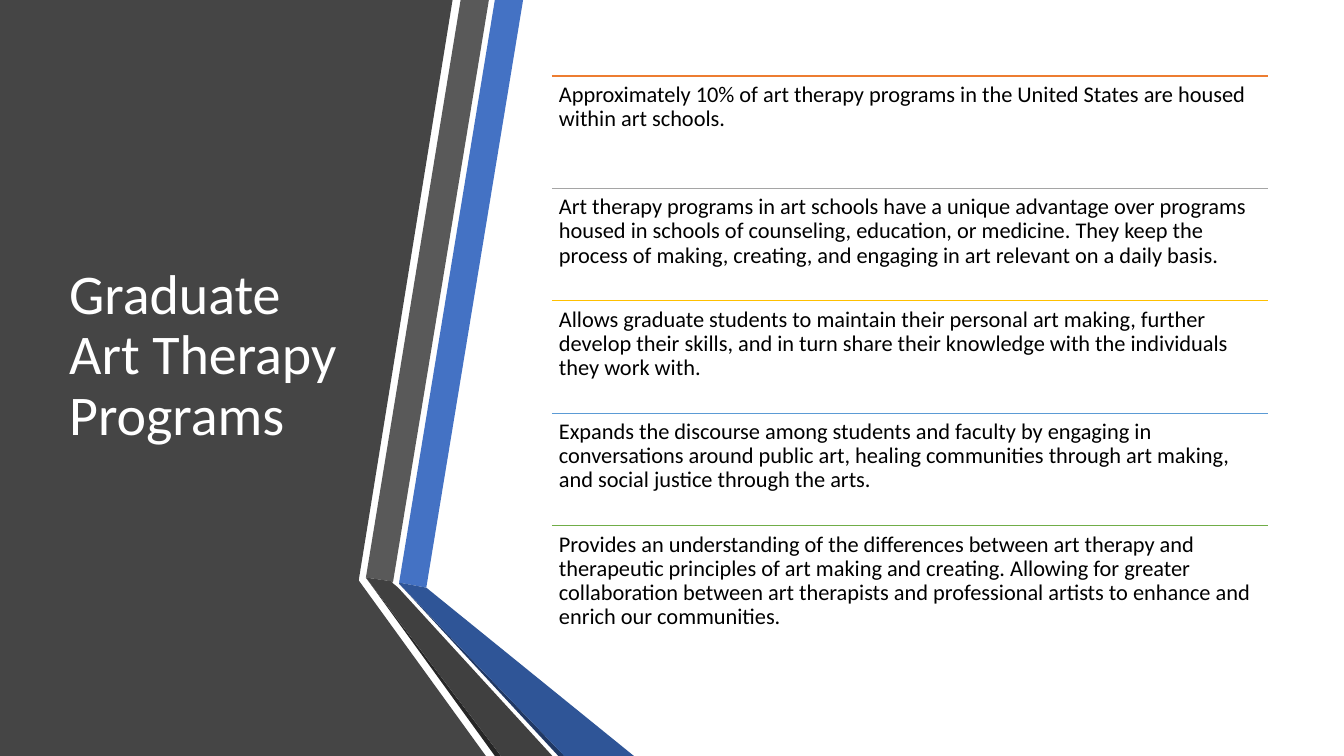
from dataclasses import dataclass

from lxml import etree
from pptx import Presentation
from pptx.dml.color import RGBColor
from pptx.enum.shapes import MSO_CONNECTOR
from pptx.enum.text import MSO_ANCHOR, MSO_AUTO_SIZE, PP_ALIGN
from pptx.oxml.ns import qn
from pptx.util import Inches, Pt

STRAIGHT = MSO_CONNECTOR.STRAIGHT
TOP, MIDDLE = MSO_ANCHOR.TOP, MSO_ANCHOR.MIDDLE
LEFT = PP_ALIGN.LEFT
NO_FIT = MSO_AUTO_SIZE.NONE

TITLE = "Graduate Art Therapy Programs"

# Rule colour and statement for each row
POINTS = [
    ("ED7D31", "Approximately 10% of art therapy programs in the United States "
     "are housed within art schools."),
    ("A5A5A5", "Art therapy programs in art schools have a unique advantage over "
     "programs housed in schools of counseling, education, or medicine. They keep "
     "the process of making, creating, and engaging in art relevant on a daily basis."),
    ("FFC000", "Allows graduate students to maintain their personal art making, "
     "further develop their skills, and in turn share their knowledge with the "
     "individuals they work with."),
    ("5B9BD5", "Expands the discourse among students and faculty by engaging in "
     "conversations around public art, healing communities through art making, "
     "and social justice through the arts."),
    ("70AD47", "Provides an understanding of the differences between art therapy and "
     "therapeutic principles of art making and creating. Allowing for greater "
     "collaboration between art therapists and professional artists to enhance and "
     "enrich our communities."),
]

HEIGHT = 7.5
WIDTH = HEIGHT * 16 / 9

# Fill and corners of each band, in inches, from back to front
BANDS = [
    # Title panel
    ("454545", [(0, 0), (4.49, 0), (3.56, 5.75), (3.56, 5.76), (4.82, HEIGHT),
                (0, HEIGHT)]),
    # Upper bands
    ("4472C4", [(3.96, 5.78), (4.23, 5.83), (5.19, 0), (4.91, 0)]),
    ("595959", [(4.85, 0), (4.57, 0), (3.63, 5.73), (3.9, 5.77)]),
    # Shaded edges
    ("262626", [(3.63, 5.73), (4.91, HEIGHT), (4.97, HEIGHT)]),
    ("203864", [(3.96, 5.79), (5.54, HEIGHT), (5.6, HEIGHT)]),
    # Lower bands
    ("2F5597", [(3.96, 5.79), (5.6, HEIGHT), (6.29, HEIGHT), (4.23, 5.83),
                (3.96, 5.78)]),
    ("404040", [(5.48, HEIGHT), (3.95, 5.83), (3.89, 5.78), (3.9, 5.77),
                (3.63, 5.73), (4.97, HEIGHT)]),
]
UNITS_PER_INCH = 100

# Left, top, width and height in points
TITLE_AREA = (42.2, 54, 218.8, 401.8)
LIST_LEFT, LIST_TOP, LIST_WIDTH, LIST_HEIGHT = 394.2, 54.2, 511.4, 401.6
ROW_HEIGHT = LIST_HEIGHT / len(POINTS)


@dataclass(frozen=True)
class Theme:
    font: str = "Calibri"
    title_size: int = 40
    body_size: int = 16
    title_color: str = "FFFFFF"
    body_color: str = "000000"
    rule_width: int = 1
    line_spacing: float = 0.9
    inset: float = 0.07
    space_after: float = 5.6


THEME = Theme()


def write_text(shape, text, size, color, anchor):
    frame = shape.text_frame
    frame.text = text
    frame.word_wrap = True
    frame.auto_size = NO_FIT
    frame.vertical_anchor = anchor
    para = frame.paragraphs[0]
    para.alignment = LEFT
    para.line_spacing = THEME.line_spacing
    font = para.runs[0].font
    font.name = THEME.font
    font.size = Pt(size)
    font.color.rgb = RGBColor.from_string(color)
    return frame


def add_band(page, color, corners):
    points = [(round(x * UNITS_PER_INCH), round(y * UNITS_PER_INCH)) for x, y in corners]
    builder = page.shapes.build_freeform(*points[0], scale=Inches(1) / UNITS_PER_INCH)
    builder.add_line_segments(points[1:], close=True)
    band = builder.convert_to_shape()
    band.shadow.inherit = False
    band.fill.solid()
    band.fill.fore_color.rgb = RGBColor.from_string(color)
    band.line.fill.background()


def add_title(page):
    title = page.shapes.title
    title.left, title.top, title.width, title.height = map(Pt, TITLE_AREA)
    write_text(title, TITLE, THEME.title_size, THEME.title_color, MIDDLE)
    # Lift the title above the dark panel
    title.element.getparent().append(title.element)


def add_point(page, row, color, text):
    left, width = Pt(LIST_LEFT), Pt(LIST_WIDTH)
    top = Pt(LIST_TOP + row * ROW_HEIGHT)
    rule = page.shapes.add_connector(STRAIGHT, left, top, left + width, top)
    rule.line.color.rgb = RGBColor.from_string(color)
    rule.line.width = Pt(THEME.rule_width)
    etree.SubElement(rule.element.spPr, qn("a:effectLst"))

    box = page.shapes.add_textbox(left, top, width, Pt(ROW_HEIGHT))
    frame = write_text(box, text, THEME.body_size, THEME.body_color, TOP)
    frame.margin_left = frame.margin_right = Inches(THEME.inset)
    frame.margin_top = frame.margin_bottom = Inches(THEME.inset)
    frame.paragraphs[0].space_after = Pt(THEME.space_after)


def main():
    deck = Presentation()
    deck.slide_width, deck.slide_height = Inches(WIDTH), Inches(HEIGHT)
    page = deck.slides.add_slide(deck.slide_layouts.get_by_name("Title Only"))
    for color, corners in BANDS:
        add_band(page, color, corners)
    add_title(page)
    for row, (color, text) in enumerate(POINTS):
        add_point(page, row, color, text)
    deck.save("out.pptx")


if __name__ == "__main__":
    main()
